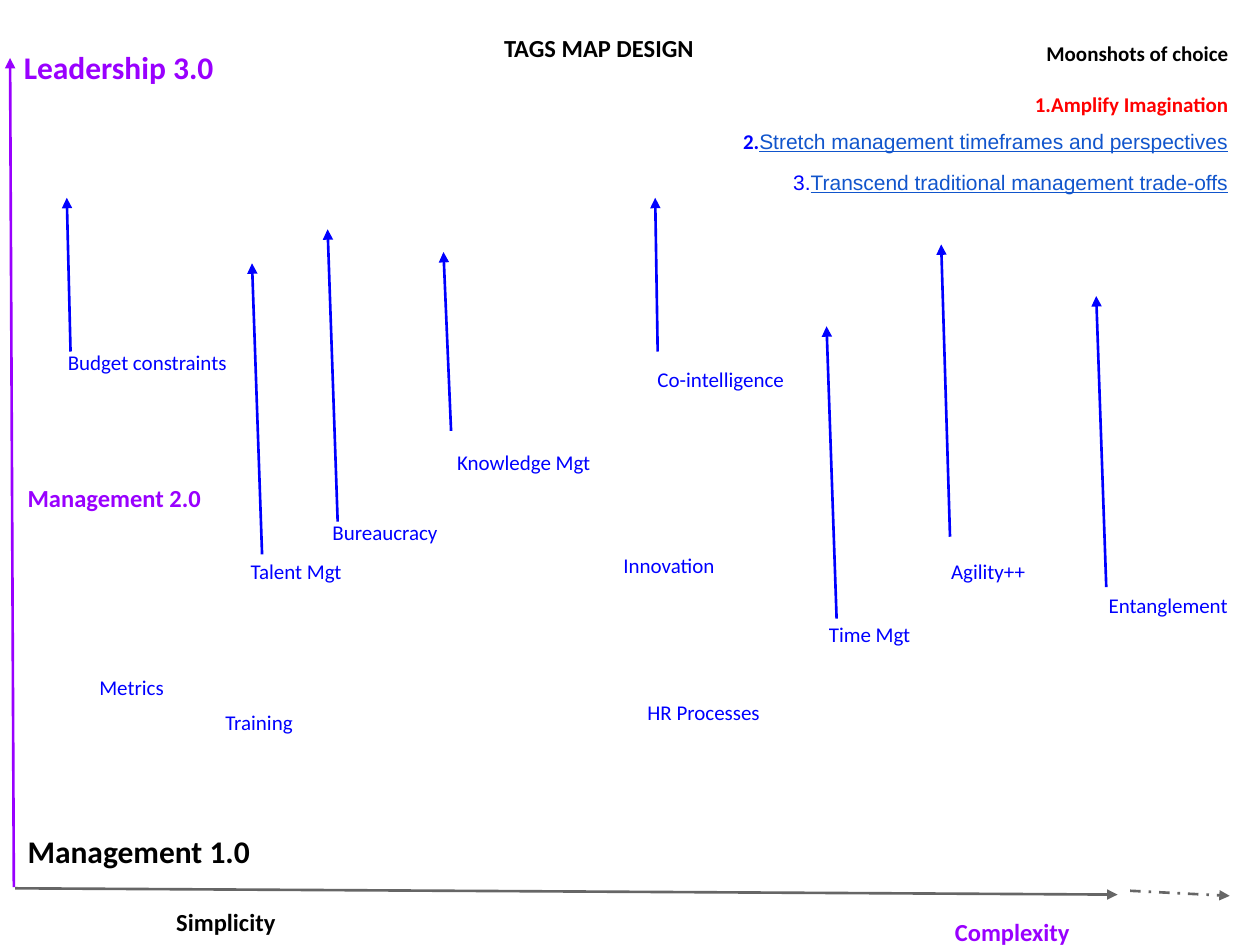
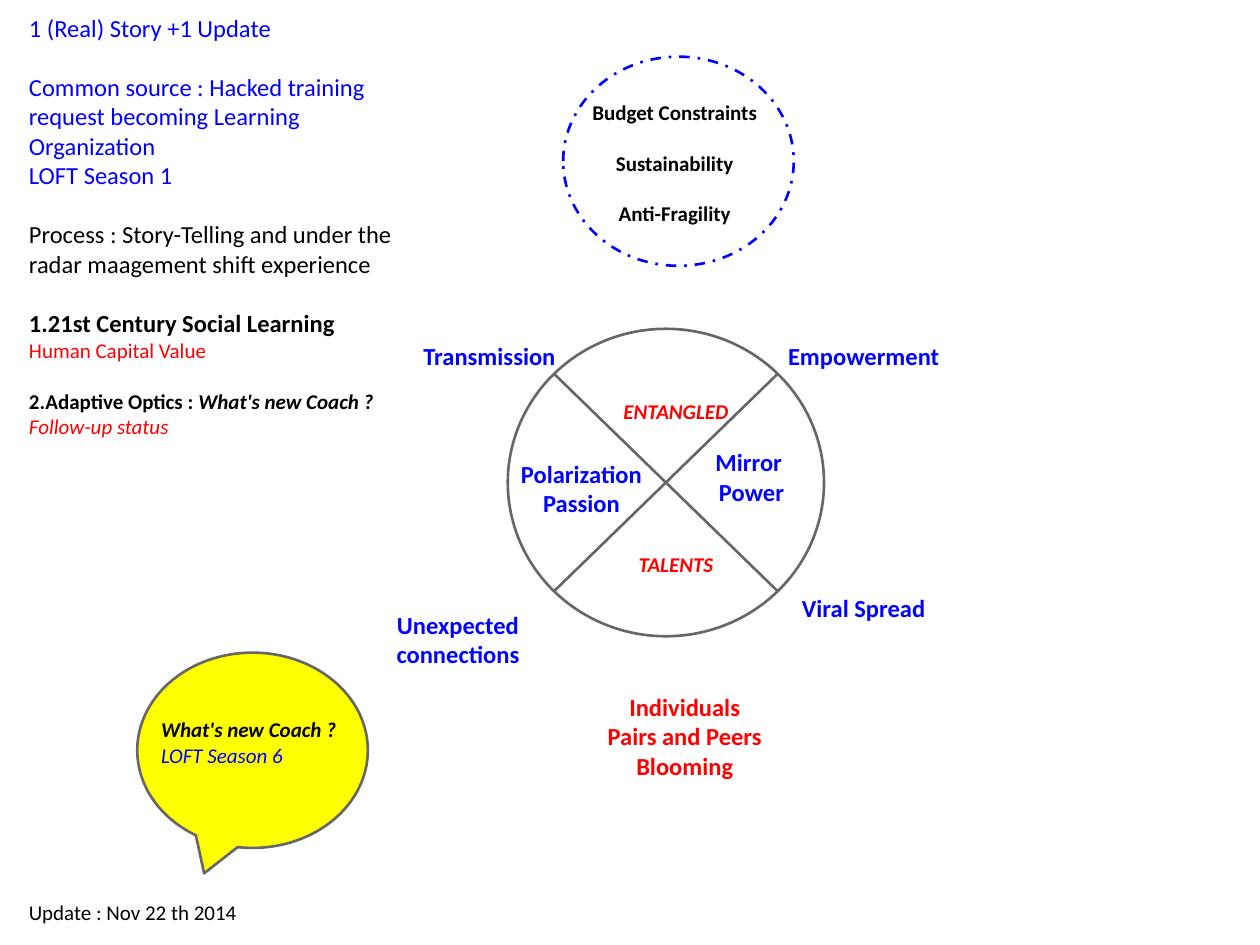
from pptx import Presentation
from pptx.dml.color import RGBColor
from pptx.enum.dml import MSO_LINE as DASH
from pptx.enum.shapes import MSO_CONNECTOR, MSO_SHAPE as SHAPE
from pptx.enum.text import MSO_ANCHOR as ANCHOR, MSO_AUTO_SIZE, PP_ALIGN as ALIGN
from pptx.oxml.ns import qn
from pptx.util import Pt
from lxml.etree import SubElement

# Shared style
PX = 9144  # EMU per px, 100 px to the inch
BLACK = RGBColor(0x00, 0x00, 0x00)
BLUE = RGBColor(0x00, 0x00, 0xFF)
LINK = RGBColor(0x11, 0x55, 0xCC)
RED = RGBColor(0xFF, 0x00, 0x00)
PURPLE = RGBColor(0x99, 0x00, 0xFF)
GREY = RGBColor(0x66, 0x66, 0x66)
YELLOW = RGBColor(0xFF, 0xFF, 0x00)
GAP_14, GAP_12 = 17, 14.6  # one line of 14 pt and of 12 pt text


def add_span(para, text, size=12, color=BLACK, bold=False, italic=False,
             underline=False, font="Calibri"):
    span = para.add_run()
    span.text = text
    style = span.font
    style.name, style.size, style.color.rgb = font, Pt(size), color
    style.bold, style.italic, style.underline = bold, italic, underline


def line(*spans, before=0, after=0, spacing=1.0):
    """A paragraph: (text, format) spans and its spacing."""
    return spans, before, after, spacing


class Deck:
    def __init__(self):
        self.deck = Presentation()
        self.deck.slide_width, self.deck.slide_height = 1000 * PX, 750 * PX
        self.page = None

    def new_page(self):
        self.page = self.deck.slides.add_slide(self.deck.slide_layouts[1])

    def fill_text(self, box, lines, align=ALIGN.LEFT, anchor=ANCHOR.TOP, **style):
        frame = box.text_frame
        frame.word_wrap, frame.auto_size = True, MSO_AUTO_SIZE.NONE
        frame.vertical_anchor = anchor
        frame.margin_left = frame.margin_right = 10 * PX
        frame.margin_top = frame.margin_bottom = 10 * PX
        for index, item in enumerate(lines):
            spans, before, after, spacing = (
                line((item, {})) if isinstance(item, str) else item)
            para = frame.add_paragraph() if index else frame.paragraphs[0]
            para.alignment, para.line_spacing = align, spacing
            para.space_before, para.space_after = Pt(before), Pt(after)
            for text, extra in spans:
                add_span(para, text, **{**style, **extra})

    def text(self, place, *lines, **style):
        box = self.page.shapes.add_textbox(*(n * PX for n in place))
        self.fill_text(box, lines, **style)

    def placeholder(self, index, place, *lines, **style):
        box = self.page.placeholders[index]
        box.left, box.top, box.width, box.height = (n * PX for n in place)
        self.fill_text(box, lines, **style)
        for para in box.text_frame.paragraphs:
            props = para._p.get_or_add_pPr()
            props.set("marL", "0")
            props.set("indent", "0")
            SubElement(props, qn("a:buNone"))

    def title(self, place, *lines, **style):
        self.placeholder(0, place, *lines, **style)

    def body(self, place, *lines, **style):
        self.placeholder(1, place, *lines, **style)

    def outline(self, shape, color, dash):
        shape.line.color.rgb, shape.line.width = color, Pt(1.5)
        if dash:
            shape.line.dash_style = dash

    def shape(self, kind, place, color, fill=None, dash=None, adjust=()):
        shape = self.page.shapes.add_shape(kind, *(n * PX for n in place))
        shape.shadow.inherit = False
        for index, value in enumerate(adjust):
            shape.adjustments[index] = value
        if fill:
            shape.fill.solid()
            shape.fill.fore_color.rgb = fill
        else:
            shape.fill.background()
        self.outline(shape, color, dash)

    def arrow(self, ends, color, dash=None):
        arrow = self.page.shapes.add_connector(
            MSO_CONNECTOR.STRAIGHT, *(n * PX for n in ends))
        self.outline(arrow, color, dash)
        SubElement(arrow.line._get_or_add_ln(), qn("a:tailEnd"), type="triangle")
        SubElement(arrow._element.spPr, qn("a:effectLst"))


def build_tags_map(deck):
    deck.new_page()
    deck.title((390, 16, 187, 35), "TAGS MAP DESIGN", size=14, bold=True)

    # Moonshots
    link = dict(font="Arial", color=LINK, underline=True)
    loose = dict(before=2, after=2, spacing=1.35)
    deck.body(
        (547, 22, 438, 121),
        line(("Moonshots of choice", dict(bold=True))),
        line(("1.Amplify Imagination", dict(bold=True, color=RED)), before=GAP_12),
        line(("2.", dict(bold=True, color=BLUE)),
             ("Stretch management timeframes and perspectives", link), **loose),
        line(("3.", dict(font="Arial", color=BLUE)),
             ("Transcend traditional management trade-offs", link), **loose),
        align=ALIGN.RIGHT)

    # Axes
    deck.arrow((11, 704, 8, 46), PURPLE)
    deck.arrow((12, 705, 887, 710), GREY)
    deck.arrow((897, 707, 976, 711), GREY, DASH.DASH_DOT)
    for text, left, top, size, color in (
            ("Leadership 3.0", 9, 28, 18, PURPLE),
            ("Management 2.0", 12, 373, 14, PURPLE),
            ("Management 1.0", 12, 650, 18, BLACK),
            ("Simplicity", 130, 710, 14, BLACK),
            ("Complexity", 748, 718, 14, PURPLE)):
        deck.text((left, top, 251, 35), text, size=size, color=color, bold=True)

    # Tags, each with the arrow that lifts it, if any
    tags = (
        ("Budget constraints", (44, 270, 187, 35), (56, 279, 53, 157)),
        ("Talent Mgt", (189, 429, 94, 49), (208, 440, 200, 209)),
        ("Bureaucracy", (254, 405, 144, 35), (268, 414, 260, 182)),
        ("Knowledge Mgt", (353, 342, 166, 49), (358, 342, 352, 200)),
        ("Co-intelligence", (512, 261, 144, 80), (522, 279, 520, 157)),
        ("Time Mgt", (648, 482, 94, 42), (664, 491, 656, 259)),
        ("Agility++", (745, 432, 87, 42), (754, 426, 747, 194)),
        ("Entanglement", (870, 440, 115, 80), (878, 466, 870, 235)),
        ("Innovation", (485, 415, 123, 67), None),
        ("Metrics", (69, 500, 80, 90), None),
        ("Training", (169, 500, 94, 146), None),
        ("HR Processes", (504, 511, 144, 109), None))
    for text, place, lift in tags:
        deck.text(place, text, color=BLUE, anchor=ANCHOR.MIDDLE)
        if lift:
            deck.arrow(lift, BLUE)


def build_story(deck):
    deck.new_page()

    # Story
    deck.title((13, 0, 312, 44), "1 (Real) Story +1 Update", size=14, color=BLUE)
    blue, strong, small_red = dict(color=BLUE), dict(bold=True), dict(size=12, color=RED)
    deck.body(
        (13, 47, 312, 307),
        line(("Common source : Hacked training request becoming Learning Organization", blue)),
        line(("LOFT Season 1", blue)),
        line(("Process : Story-Telling and under the radar maagement shift experience", {}),
             before=GAP_14),
        line(("1.21st Century Social Learning", strong), before=GAP_14),
        line(("Human Capital Value", small_red)),
        line(("2.Adaptive Optics : ", dict(size=12, bold=True)),
             ("What's new Coach ?", dict(size=12, bold=True, italic=True)), before=GAP_12),
        line(("Follow-up status", dict(small_red, italic=True))),
        size=14)

    # Wheel and constraints
    deck.shape(SHAPE.FLOWCHART_SUMMING_JUNCTION, (403, 261, 251, 244), GREY)
    deck.shape(SHAPE.OVAL, (447, 45, 183, 166), BLUE, dash=DASH.DASH_DOT)
    deck.text((460, 69, 151, 93), "Budget Constraints",
              line(("Sustainability", {}), before=GAP_12),
              line(("Anti-Fragility", {}), before=GAP_12),
              bold=True, align=ALIGN.CENTER)
    deck.text((416, 306, 241, 155), "ENTANGLED",
              line(("TALENTS", {}), before=5 * GAP_12),
              color=RED, bold=True, italic=True, align=ALIGN.CENTER)
    for place, lines, color in (
            ((325, 261, 127, 31), ["Transmission"], BLUE),
            ((603, 261, 165, 78), ["Empowerment"], BLUE),
            ((390, 354, 143, 59), ["Polarization", "Passion"], BLUE),
            ((525, 345, 143, 59), ["Mirror ", "Power"], BLUE),
            ((300, 474, 127, 78), ["Unexpected connections"], BLUE),
            ((614, 461, 143, 59), ["Viral Spread"], BLUE),
            ((472, 539, 143, 113), ["Individuals", "Pairs and Peers Blooming"], RED)):
        deck.text(place, *lines, size=14, color=color, bold=True, align=ALIGN.CENTER)

    # Callout and date
    deck.shape(SHAPE.OVAL_CALLOUT, (109, 518, 183, 155), GREY, YELLOW,
               adjust=(-0.21, 0.63))
    deck.text((118, 559, 183, 73),
              line(("What's new Coach ?", strong)),
              line(("LOFT Season 6", blue)), italic=True)
    deck.text((13, 711, 328, 26), "Update : Nov 22 th 2014", anchor=ANCHOR.MIDDLE)


def main():
    deck = Deck()
    build_tags_map(deck)
    build_story(deck)
    deck.deck.save("out.pptx")


if __name__ == "__main__":
    main()
